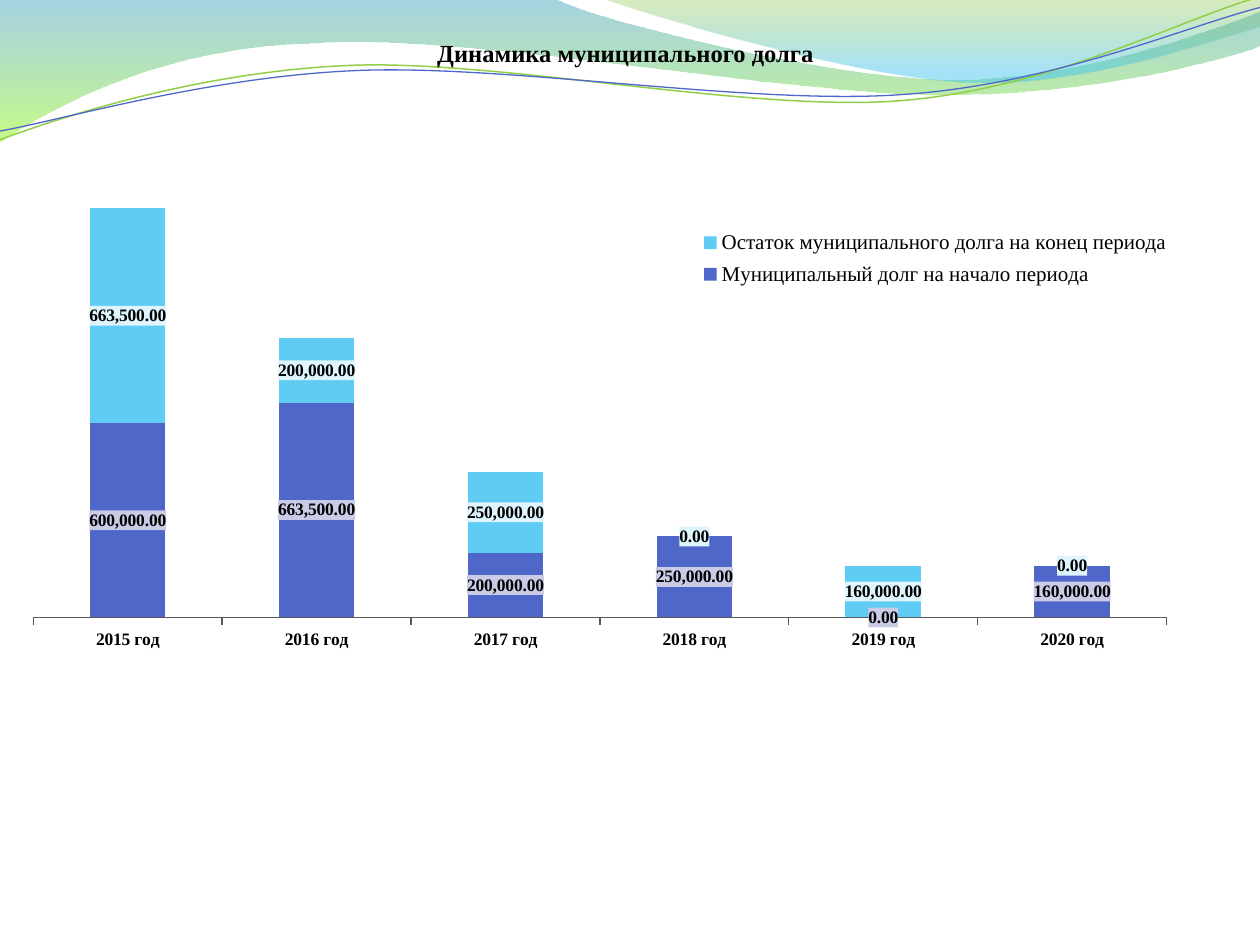
import math

import pptx
import pptx.chart.data
import pptx.dml.color
import pptx.enum.chart
import pptx.enum.text
import pptx.oxml
import pptx.oxml.ns
import pptx.util
from pptx.util import Inches

FONT = "Times New Roman"
TILT = 2.7
UNITS = 1000
NS = pptx.oxml.ns.nsdecls("a", "c")

BANDS = [
    ([(0, 0), (4.4, -0.01), (4.76, 0.17, 6.64, 0.63, 7.58, 0.63),
      (8.53, 0.63, 9.58, 0.26, 10, 0.09), (10.01, 0.36),
      (9.83, 0.44, 8.7, 0.76, 7.46, 0.75), (6.22, 0.75, 3.82, 0.28, 2.57, 0.34),
      (1.29, 0.36, 0.46, 0.83, -0.01, 1.13), (0, 0)],
     [(0, "3B9CBF", 45), (1, "9CFA24", 55)]),
    ([(4.79, -0.01), (5.09, 0.11, 6.82, 0.62, 7.69, 0.65),
      (8.56, 0.69, 9.61, 0.32, 10, 0.21), (10, 0), (4.79, -0.01)],
     [(0, "7EBE2C", 30), (0.8, "39C1F1", 45)]),
]
WAVES = [
    ([(0, 1.11), (0.48, 0.93, 1.58, 0.57, 2.77, 0.52),
      (3.95, 0.47, 5.93, 0.89, 7.13, 0.8), (8.33, 0.71, 9.38, 0.15, 9.98, -0.02)],
     (4.99, 0.57), "93CE48", 0.85),
    ([(0, 1.04), (0.47, 0.96, 1.64, 0.61, 2.83, 0.56),
      (4.03, 0.51, 5.97, 0.84, 7.17, 0.75), (8.36, 0.67, 9.41, 0.21, 10, 0.06)],
     (5, 0.59), "4E67C8", 0.75),
]
YEARS = [f"{year} год" for year in range(2015, 2021)]
DEBTS = [
    ("Муниципальный долг на начало периода",
     (600000, 663500, 200000, 250000, 0, 160000), "4E67C8", "CACBE6"),
    ("Остаток муниципального долга на конец периода",
     (663500, 200000, 250000, 0, 160000, 0), "5ECCF3", "DFF5FD"),
]


def color(code):
    return pptx.dml.color.RGBColor.from_string(code)


def style(font, size=10, bold=False, name=FONT, code="000000"):
    font.size = pptx.util.Pt(size)
    font.bold = bold
    font.name = name
    font.color.rgb = color(code)


def write(frame, text, align=pptx.enum.text.PP_ALIGN.CENTER, **form):
    par = frame.paragraphs[0]
    par.alignment = align
    run = par.add_run()
    run.text = text
    style(run.font, **form)


def turn(part, mid, angle):
    cos, sin = math.cos(math.radians(angle)), math.sin(math.radians(angle))
    cx, cy = mid
    spots = []
    for x, y in zip(part[::2], part[1::2]):
        spots += [cx + (x - cx) * cos - (y - cy) * sin,
                  cy + (x - cx) * sin + (y - cy) * cos]
    return spots


def bend(shape, parts):
    nodes = iter(shape._element.findall(".//" + pptx.oxml.ns.qn("a:lnTo")))
    for part in parts:
        group = [next(nodes) for _ in part[::2]]
        if len(group) == 1:
            continue
        curve = pptx.oxml.parse_xml(f"<a:cubicBezTo {NS}/>")
        group[0].addprevious(curve)
        for node in group:
            curve.append(node[0])
            node.getparent().remove(node)


def outline(slide, parts, close):
    spots = [(x * UNITS, y * UNITS) for part in parts
             for x, y in zip(part[::2], part[1::2])]
    build = slide.shapes.build_freeform(*spots[0], scale=Inches(1) / UNITS)
    build.add_line_segments(spots[1:], close=close)
    shape = build.convert_to_shape()
    shape.shadow.inherit = False
    bend(shape, parts[1:])
    return shape


def add_band(slide, parts, stops):
    shape = outline(slide, parts, True)
    shape.line.fill.background()
    shape.fill.gradient()
    shape.fill.gradient_angle = 270
    for stop, (spot, code, alpha) in zip(shape.fill.gradient_stops, stops):
        stop.position = spot
        stop.color.rgb = color(code)
        tint = stop._gs.find(pptx.oxml.ns.qn("a:srgbClr"))
        tint.append(pptx.oxml.parse_xml(f'<a:alpha {NS} val="{alpha * 1000}"/>'))


def add_wave(slide, parts, mid, code, width):
    shape = outline(slide, [turn(part, mid, TILT) for part in parts], False)
    shape.rotation = 360 - TILT
    shape.fill.background()
    shape.line.color.rgb = color(code)
    shape.line.width = pptx.util.Pt(width)


def add_title(slide, text):
    title = slide.shapes.title
    title.left, title.top = Inches(2.8), Inches(0.25)
    title.width, title.height = Inches(4.33), Inches(0.34)
    frame = title.text_frame
    frame.word_wrap = True
    frame.auto_size = pptx.enum.text.MSO_AUTO_SIZE.SHAPE_TO_FIT_TEXT
    frame.vertical_anchor = pptx.enum.text.MSO_ANCHOR.TOP
    write(frame, text, size=14, bold=True)
    slide.shapes._spTree.append(title._element)


def layout(x, y, w, h, inner=False):
    target = '<c:layoutTarget val="inner"/>' if inner else ""
    return pptx.oxml.parse_xml(
        f'<c:layout {NS}><c:manualLayout>{target}'
        '<c:xMode val="edge"/><c:yMode val="edge"/>'
        f'<c:x val="{x}"/><c:y val="{y}"/><c:w val="{w}"/><c:h val="{h}"/>'
        '</c:manualLayout></c:layout>')


def place(parent, node, after=None):
    for old in parent.findall(node.tag):
        parent.remove(old)
    if after is None:
        parent.insert(0, node)
    else:
        parent.find(pptx.oxml.ns.qn(after)).addnext(node)


def add_labels(series, back):
    labels = series.data_labels
    labels.show_value = True
    labels.number_format = "#,##0.00"
    labels.number_format_is_linked = False
    style(labels.font, bold=True)
    place(labels._element, pptx.oxml.parse_xml(
        f'<c:spPr {NS}><a:solidFill><a:srgbClr val="{back}"/></a:solidFill></c:spPr>'),
        "c:numFmt")


def add_chart(slide):
    data = pptx.chart.data.CategoryChartData(number_format="#,##0.00")
    data.categories = YEARS
    for name, values, _, _ in DEBTS:
        data.add_series(name, values)
    kinds = pptx.enum.chart
    chart = slide.shapes.add_chart(
        kinds.XL_CHART_TYPE.COLUMN_STACKED,
        Inches(0.12), Inches(1.15), Inches(9.61), Inches(4.1), data).chart
    style(chart.font, name="Cambria")
    chart.has_title = False

    plot = chart.plots[0]
    plot.gap_width, plot.overlap = 150, 100
    plot.vary_by_categories = False
    for series, (_, _, code, back) in zip(plot.series, DEBTS):
        series.format.fill.solid()
        series.format.fill.fore_color.rgb = color(code)
        add_labels(series, back)

    axis = chart.category_axis
    axis.major_tick_mark = kinds.XL_TICK_MARK.OUTSIDE
    axis.format.line.color.rgb = color("595959")
    style(axis.tick_labels.font, bold=True)
    scale = chart.value_axis
    scale.minimum_scale, scale.maximum_scale = 0, 1400000
    scale.has_major_gridlines = False
    scale.visible = False

    chart.has_legend = True
    legend = chart.legend
    legend.position = kinds.XL_LEGEND_POSITION.RIGHT
    legend.include_in_layout = True
    style(legend.font, size=12)
    place(legend._element, layout(0.56, 0.15, 0.4, 0.14), "c:legendPos")
    place(chart._chartSpace.chart.plotArea, layout(0.015, 0.037, 0.936, 0.878, True))


def main():
    deck = pptx.Presentation()
    deck.slide_width, deck.slide_height = Inches(10), Inches(7.5)
    slide = deck.slides.add_slide(deck.slide_layouts[5])
    for band in BANDS:
        add_band(slide, *band)
    for wave in WAVES:
        add_wave(slide, *wave)
    add_title(slide, "Динамика муниципального долга")
    add_chart(slide)
    deck.save("out.pptx")


if __name__ == "__main__":
    main()
